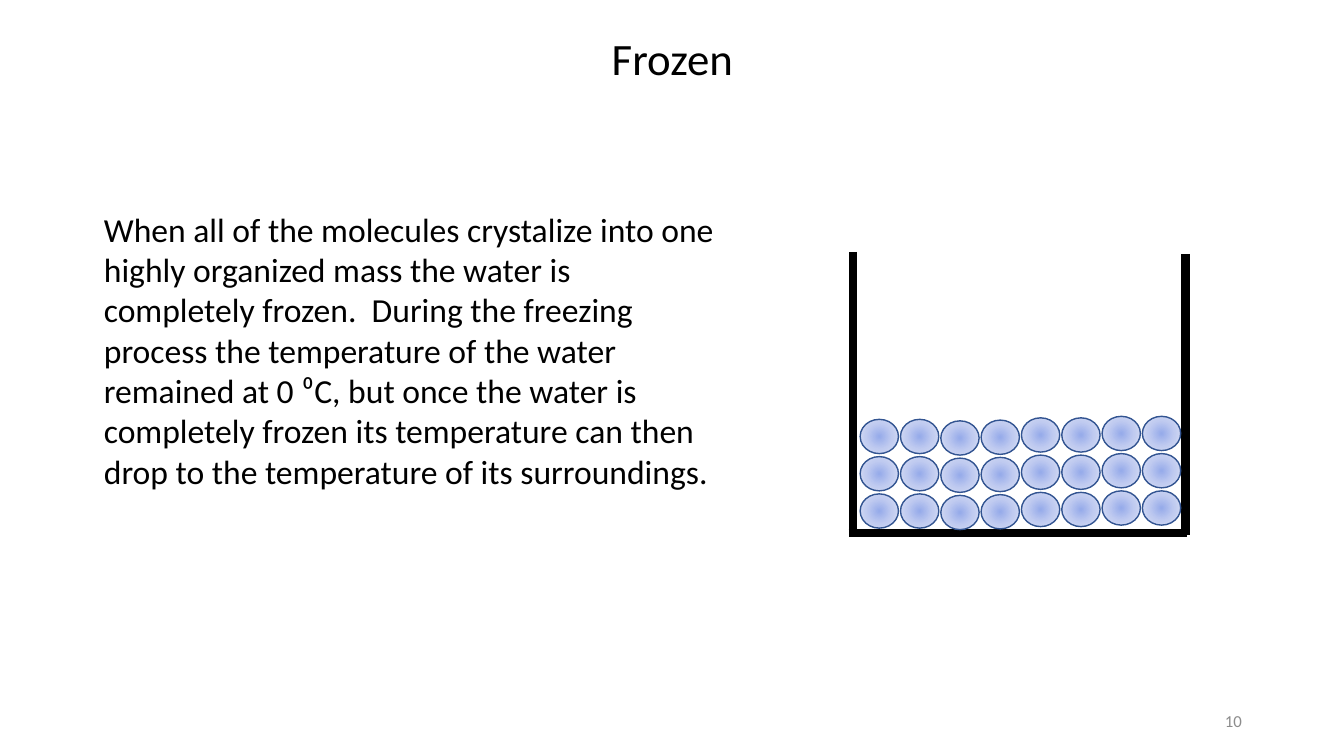
import pptx
import pptx.dml.color
import pptx.enum.shapes
import pptx.enum.text
import pptx.oxml
import pptx.oxml.ns
import pptx.util

WIDTH = pptx.util.Inches(13.33)
HEIGHT = pptx.util.Inches(7.5)
COLORS = {
    "text": "000000",
    "number": "8C8C8C",
    "beaker": "000000",
    "outline": "325491",
    "core": "96ABEA",
    "middle": "C0CBF0",
    "rim": "E0E5F7",
}
ALIGN = pptx.enum.text.PP_ALIGN
ANCHOR = pptx.enum.text.MSO_ANCHOR

# Vertical drift of each molecule column, in percent of the slide height
COLUMN_DRIFTS = [0, 0, 0.2, 0.1, -0.2, -0.2, -0.4, -0.4]
ROW_COUNT = 3

BODY_TEXT = (
    "When all of the molecules crystalize into one highly organized mass "
    "the water is completely frozen.  During the freezing process the "
    "temperature of the water remained at 0 ⁰C, but once the water is "
    "completely frozen its temperature can then drop to the temperature "
    "of its surroundings."
)


def across(percent):
    return round(WIDTH * percent / 100)


def down(percent):
    return round(HEIGHT * percent / 100)


def box(left, top, width, height):
    """Turn percentages of the slide into a position and a size."""
    return across(left), down(top), across(width), down(height)


def color(name):
    return pptx.dml.color.RGBColor.from_string(COLORS[name])


def place(shape, area):
    shape.left, shape.top, shape.width, shape.height = area


def write_text(shape, text, size, color_name="text", align=ALIGN.LEFT,
               anchor=ANCHOR.TOP):
    frame = shape.text_frame
    frame.word_wrap = True
    frame.auto_size = pptx.enum.text.MSO_AUTO_SIZE.NONE
    frame.vertical_anchor = anchor
    paragraph = frame.paragraphs[0]
    paragraph.alignment = align
    paragraph.space_before = pptx.util.Pt(0)
    run = paragraph.add_run()
    run.text = text
    run.font.name = "Calibri"
    run.font.size = pptx.util.Pt(size)
    run.font.color.rgb = color(color_name)
    return paragraph


def remove_bullet(paragraph):
    properties = paragraph._p.get_or_add_pPr()
    properties.set("marL", "0")
    properties.set("indent", "0")
    properties.append(pptx.oxml.parse_xml(
        f'<a:buNone {pptx.oxml.ns.nsdecls("a")}/>'))


def add_wall(shapes, start, end):
    wall = shapes.add_connector(
        pptx.enum.shapes.MSO_CONNECTOR.STRAIGHT,
        across(start[0]), down(start[1]), across(end[0]), down(end[1]))
    wall.line.color.rgb = color("beaker")
    wall.line.width = pptx.util.Pt(6)
    wall._element.spPr.append(pptx.oxml.parse_xml(
        f'<a:effectLst {pptx.oxml.ns.nsdecls("a")}/>'))


def add_beaker(slide):
    shapes = slide.shapes.add_group_shape().shapes
    add_wall(shapes, (63.45, 33.33), (63.45, 70.53))
    add_wall(shapes, (63.15, 70.53), (88.35, 70.53))
    add_wall(shapes, (88.2, 33.6), (88.2, 70.8))


def fill_radial(shape, color_names):
    """Spread the colours evenly from the centre outwards."""
    step = 100000 // (len(color_names) - 1)
    stops = "".join(
        f'<a:gs pos="{index * step}"><a:srgbClr val="{COLORS[name]}"/></a:gs>'
        for index, name in enumerate(color_names))
    gradient = pptx.oxml.parse_xml(
        f'<a:gradFill {pptx.oxml.ns.nsdecls("a")} rotWithShape="1">'
        f'<a:gsLst>{stops}</a:gsLst><a:path path="circle">'
        '<a:fillToRect l="50000" t="50000" r="50000" b="50000"/>'
        '</a:path></a:gradFill>')
    geometry = shape._element.spPr.find(pptx.oxml.ns.qn("a:prstGeom"))
    geometry.addnext(gradient)


def add_molecule(slide, left, top):
    molecule = slide.shapes.add_shape(
        pptx.enum.shapes.MSO_SHAPE.OVAL, *box(left, top, 2.85, 4.53))
    fill_radial(molecule, ["core", "middle", "rim"])
    molecule.line.color.rgb = color("outline")
    molecule.line.width = pptx.util.Pt(1)
    molecule.shadow.inherit = False


def main():
    presentation = pptx.Presentation()
    presentation.slide_width = WIDTH
    presentation.slide_height = HEIGHT
    slide = presentation.slides.add_slide(presentation.slide_layouts[1])

    # Title and explanation
    title = slide.shapes.title
    place(title, box(24.9, 3.33, 50.25, 8.53))
    write_text(title, "Frozen", 32, align=ALIGN.CENTER)
    body = slide.placeholders[1]
    place(body, box(6.98, 26.93, 47.7, 44.4))
    remove_bullet(write_text(body, BODY_TEXT, 24))

    # Beaker with the ice lattice
    add_beaker(slide)
    for row in range(ROW_COUNT):
        for column, drift in enumerate(COLUMN_DRIFTS):
            add_molecule(slide, 64 + 3 * column, 55.47 + 4.93 * row + drift)

    # Slide number
    number = slide.shapes.add_textbox(*box(70.65, 92.67, 22.5, 5.33))
    write_text(number, "10", 12, color_name="number", align=ALIGN.RIGHT,
               anchor=ANCHOR.MIDDLE)

    presentation.save("out.pptx")


if __name__ == "__main__":
    main()
